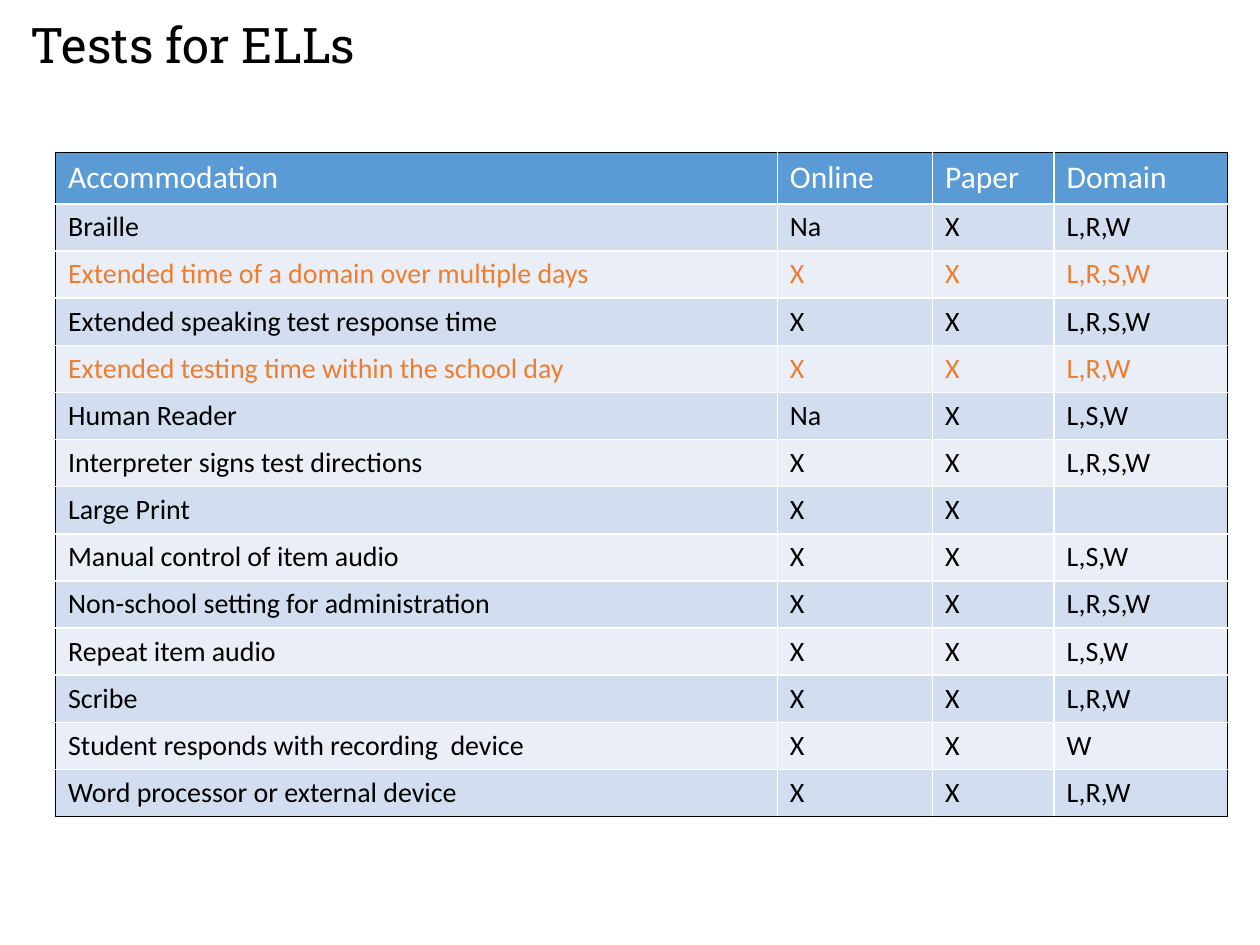
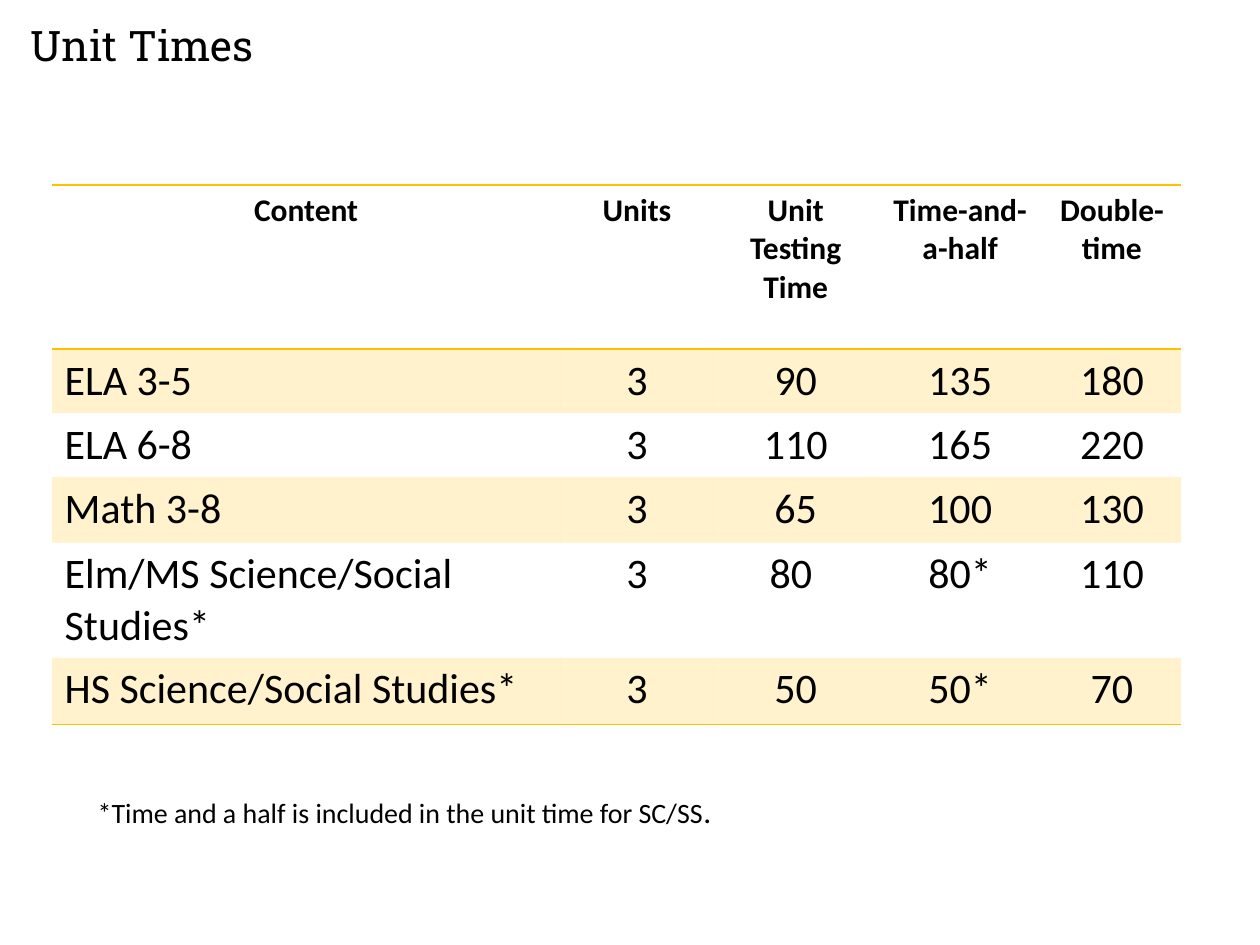
"""Build two slides of testing accommodations and unit times."""
from dataclasses import dataclass

from lxml.etree import SubElement
from pptx import Presentation
from pptx.dml.color import RGBColor
from pptx.enum.text import MSO_ANCHOR, MSO_AUTO_SIZE, PP_ALIGN
from pptx.oxml.ns import qn
from pptx.util import Cm, Pt


@dataclass(frozen=True)
class Theme:
    """Colours, fonts and type sizes shared by the slides."""
    title_font: str = "Roboto Slab"
    body_font: str = "Calibri"
    black: str = "000000"
    white: str = "FFFFFF"
    blue: str = "5B9BD5"
    blue_band: str = "D2DEEF"
    pale_band: str = "EAEFF7"
    orange: str = "ED7D31"
    gold: str = "FFC000"
    gold_opacity: int = 20
    title_size: int = 28
    small_title_size: int = 24
    header_size: int = 18
    row_size: int = 16
    time_size: int = 24
    note_size: int = 16
    rule_width: int = 1


THEME = Theme()

ACCOMMODATIONS = [
    ("Accommodation", "Online", "Paper", "Domain"),
    ("Braille", "Na", "X", "L,R,W"),
    ("Extended time of a domain over multiple days", "X", "X", "L,R,S,W"),
    ("Extended speaking test response time", "X", "X", "L,R,S,W"),
    ("Extended testing time within the school day", "X", "X", "L,R,W"),
    ("Human Reader", "Na", "X", "L,S,W"),
    ("Interpreter signs test directions", "X", "X", "L,R,S,W"),
    ("Large Print", "X", "X", ""),
    ("Manual control of item audio", "X", "X", "L,S,W"),
    ("Non-school setting for administration", "X", "X", "L,R,S,W"),
    ("Repeat item audio", "X", "X", "L,S,W"),
    ("Scribe", "X", "X", "L,R,W"),
    ("Student responds with recording  device", "X", "X", "W"),
    ("Word processor or external device", "X", "X", "L,R,W"),
]
HIGHLIGHTED_ROWS = (2, 4)

UNIT_TIMES = [
    ("Content", "Units", "Unit Testing Time", "Time-and-a-half", "Double-time"),
    ("ELA 3-5", "3", "90", "135", "180"),
    ("ELA 6-8", "3", "110", "165", "220"),
    ("Math 3-8", "3", "65", "100", "130"),
    ("Elm/MS Science/Social Studies*", "3", "80 ", "80*", "110"),
    ("HS Science/Social Studies*", "3", "50", "50*", "70"),
]


def style_paragraph(paragraph, font_name, size, color, bold=False):
    """Set the font of a whole paragraph."""
    font = paragraph.font
    font.name, font.size, font.bold = font_name, Pt(size), bold
    font.color.rgb = RGBColor.from_string(color)


def add_title(slide, text, size):
    """Add the slide title at the top left."""
    frame = slide.shapes.add_textbox(Cm(0.62), Cm(0.46), Cm(24.16), Cm(1.02)).text_frame
    frame.word_wrap = True
    frame.vertical_anchor = MSO_ANCHOR.MIDDLE
    frame.margin_left = frame.margin_right = frame.margin_top = frame.margin_bottom = 0
    heading = frame.paragraphs[0]
    heading.text = text
    heading.line_spacing = 0.9
    style_paragraph(heading, THEME.title_font, size, THEME.black)


def add_note(slide, text, stop):
    """Add the footnote, whose closing stop is set larger."""
    frame = slide.shapes.add_textbox(Cm(1.72), Cm(15.85), Cm(13.16), Cm(1.02)).text_frame
    frame.word_wrap = False
    frame.auto_size = MSO_AUTO_SIZE.SHAPE_TO_FIT_TEXT
    note = frame.paragraphs[0]
    note.add_run().text = text
    closing = note.add_run()
    closing.text = stop
    style_paragraph(note, THEME.body_font, THEME.note_size, THEME.black)
    closing.font.size = Pt(THEME.header_size)


def add_grid(slide, left, top, widths, heights):
    """Add an unstyled table with columns and rows given in centimetres."""
    table = slide.shapes.add_table(
        len(heights), len(widths), Cm(left), Cm(top), Cm(sum(widths)), Cm(sum(heights))
    ).table
    table.first_row = table.horz_banding = False
    for column, width in zip(table.columns, widths):
        column.width = Cm(width)
    for row, height in zip(table.rows, heights):
        row.height = Cm(height)
    return table


def write_cell(cell, text, size, color, bold=False, align=PP_ALIGN.LEFT):
    """Write one paragraph into a cell."""
    entry = cell.text_frame.paragraphs[0]
    entry.text = text
    entry.alignment = align
    style_paragraph(entry, THEME.body_font, size, color, bold)
    if not text:
        SubElement(entry._p, qn("a:endParaRPr"), sz=str(size * 100))


def set_borders(cell, left=None, right=None, top=None, bottom=None):
    """Draw the cell's sides in the given colours, hiding those without one."""
    properties = cell._tc.get_or_add_tcPr()
    for side, color in zip("LRTB", (left, right, top, bottom)):
        line = SubElement(properties, qn(f"a:ln{side}"), w=str(Pt(THEME.rule_width)))
        if color:
            SubElement(SubElement(line, qn("a:solidFill")), qn("a:srgbClr"), val=color)
        else:
            SubElement(line, qn("a:noFill"))


def fill_cell(cell, color=None, opacity=100):
    """Fill a cell with a colour, or leave it clear."""
    if color is None:
        cell.fill.background()
        return
    cell.fill.solid()
    cell.fill.fore_color.rgb = RGBColor.from_string(color)
    if opacity < 100:
        tint = cell._tc.tcPr.find(qn("a:solidFill")).find(qn("a:srgbClr"))
        SubElement(tint, qn("a:alpha"), val=str(opacity * 1000))


def add_accommodation_table(slide):
    """Add the blue banded table with a black outline."""
    row_count = len(ACCOMMODATIONS)
    table = add_grid(slide, 1.12, 3.07, (14.55, 3.13, 2.45, 3.49),
                     [1.04] + [0.95] * (row_count - 1))
    for row, entries in enumerate(ACCOMMODATIONS):
        if row == 0:
            size, color, band = THEME.header_size, THEME.white, THEME.blue
        else:
            size = THEME.row_size
            color = THEME.orange if row in HIGHLIGHTED_ROWS else THEME.black
            band = THEME.blue_band if row % 2 else THEME.pale_band
        for column, text in enumerate(entries):
            cell = table.cell(row, column)
            write_cell(cell, text, size, color)
            on_outline = (column == 0, column == len(entries) - 1,
                          row == 0, row == row_count - 1)
            set_borders(cell, *(THEME.black if outer else THEME.white
                                for outer in on_outline))
            fill_cell(cell, band)


def add_unit_time_table(slide):
    """Add the gold banded table with rules around header and body."""
    last_row = len(UNIT_TIMES) - 1
    table = add_grid(slide, 1.05, 3.73, (10.24, 3.1, 3.3, 3.33, 2.79),
                     (3.31, 1.29, 1.29, 1.32, 2.32, 1.34))
    for row, entries in enumerate(UNIT_TIMES):
        is_header = row == 0
        size = THEME.header_size if is_header else THEME.time_size
        for column, text in enumerate(entries):
            cell = table.cell(row, column)
            centred = is_header or column > 0
            write_cell(cell, text, size, THEME.black, is_header,
                       PP_ALIGN.CENTER if centred else PP_ALIGN.LEFT)
            set_borders(cell, top=THEME.gold if row <= 1 else None,
                        bottom=THEME.gold if row in (0, last_row) else None)
            fill_cell(cell, THEME.gold if row % 2 else None, THEME.gold_opacity)


def main():
    """Build and save the presentation."""
    presentation = Presentation()
    presentation.slide_width, presentation.slide_height = Cm(25.4), Cm(19.05)
    blank = presentation.slide_layouts[6]

    accommodations = presentation.slides.add_slide(blank)
    add_title(accommodations, "Tests for ELLs", THEME.title_size)
    add_accommodation_table(accommodations)

    times = presentation.slides.add_slide(blank)
    add_title(times, "Unit Times", THEME.small_title_size)
    add_unit_time_table(times)
    add_note(times, "*Time and a half is included in the unit time for SC/SS", ".")

    presentation.save("out.pptx")


if __name__ == "__main__":
    main()
